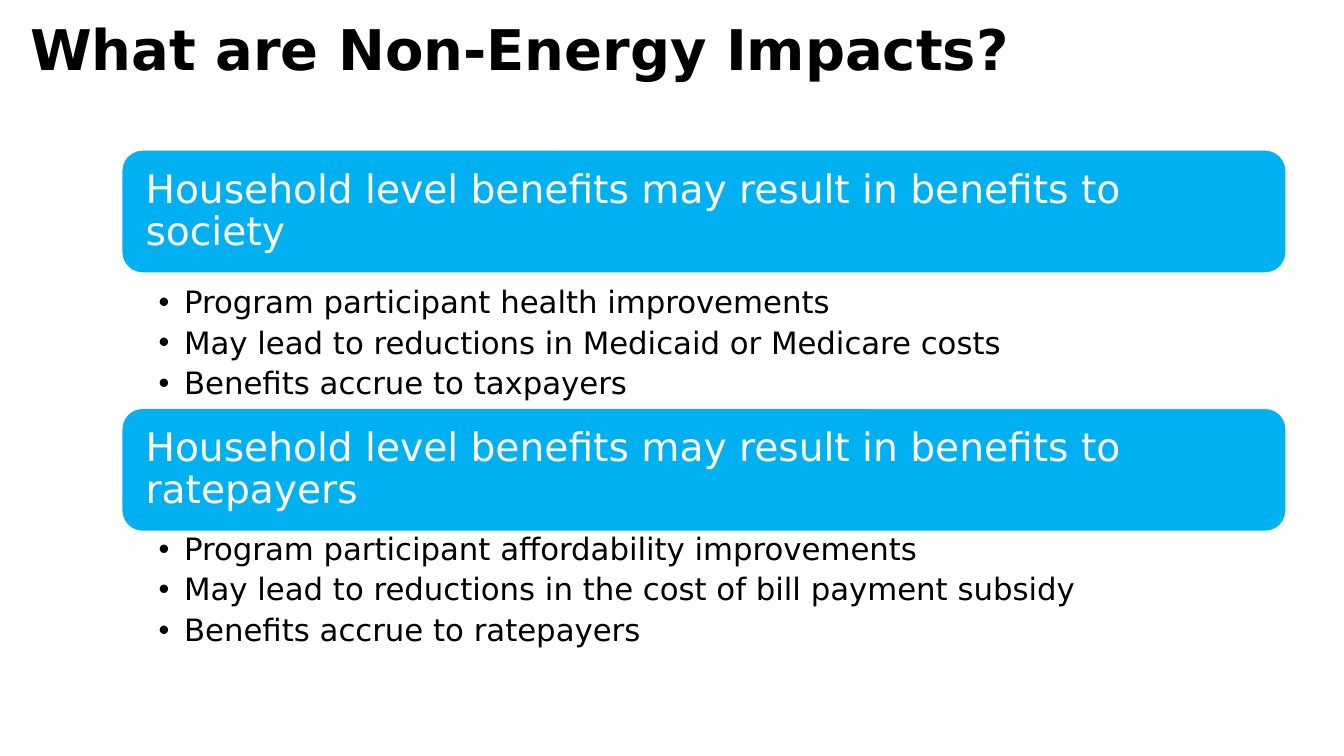
from pptx import Presentation
from pptx.dml.color import RGBColor
from pptx.enum.shapes import MSO_SHAPE
from pptx.enum.text import MSO_ANCHOR, MSO_AUTO_SIZE, PP_ALIGN
from pptx.util import Cm, Pt

TITLE = "What are Non-Energy Impacts?"
# heading, bar top (cm), list top (cm), bullets
SECTIONS = [
    ("Household level benefits may result in benefits to society", 3.78, 7.14, [
        "Program participant health improvements",
        "May lead to reductions in Medicaid or Medicare costs",
        "Benefits accrue to taxpayers",
    ]),
    ("Household level benefits may result in benefits to ratepayers", 10.29, 13.36, [
        "Program participant affordability improvements",
        "May lead to reductions in the cost of bill payment subsidy",
        "Benefits accrue to ratepayers",
    ]),
]

FONT = "DejaVu Sans"
BLACK = RGBColor(0x00, 0x00, 0x00)
WHITE = RGBColor(0xFF, 0xFF, 0xFF)
BLUE = RGBColor(0x00, 0xB0, 0xF0)
ROUNDED = MSO_SHAPE.ROUNDED_RECTANGLE
MIDDLE, TOP = MSO_ANCHOR.MIDDLE, MSO_ANCHOR.TOP
NO_FIT = MSO_AUTO_SIZE.NONE
LEFT = PP_ALIGN.LEFT

LEFT_EDGE, WIDTH = 3.07, 29.34
BAR_HEIGHT, LIST_HEIGHT = 3.1, 3.15
INDENT = Cm(0.64)


def place(shape, left, top, width, height):
    shape.left, shape.top = Cm(left), Cm(top)
    shape.width, shape.height = Cm(width), Cm(height)


def write(shape, lines, size, color=BLACK, bold=False, anchor=MIDDLE,
          insets=(0.25, 0.13, 0.25, 0.13), after=0, bullets=False):
    """Fill a shape with one paragraph per line; insets are left, top, right, bottom in cm."""
    tf = shape.text_frame
    tf.word_wrap = True
    tf.auto_size = NO_FIT
    tf.vertical_anchor = anchor
    tf.margin_left, tf.margin_top, tf.margin_right, tf.margin_bottom = map(Cm, insets)
    for i, line in enumerate(lines):
        p = tf.paragraphs[0] if i == 0 else tf.add_paragraph()
        p.alignment = LEFT
        p.line_spacing = 0.9
        p.space_before, p.space_after = Pt(0), Pt(after)
        if bullets:
            pPr = p._p.get_or_add_pPr()
            pPr.set("marL", str(INDENT))
            pPr.set("indent", str(-INDENT))
        r = p.add_run()
        r.text = line
        r.font.name, r.font.size, r.font.bold = FONT, Pt(size), bold
        r.font.color.rgb = color


prs = Presentation()
prs.slide_width, prs.slide_height = Cm(33.87), Cm(19.05)
s = prs.slides.add_slide(prs.slide_layouts.get_by_name("Two Content"))

title, *lists = list(s.placeholders)[:3]
place(title, 0.51, -0.53, 29.21, 3.68)
write(title, [TITLE], 40, bold=True)

for (heading, bar_top, list_top, points), body in zip(SECTIONS, lists):
    bar = s.shapes.add_shape(ROUNDED, Cm(LEFT_EDGE), Cm(bar_top), Cm(WIDTH), Cm(BAR_HEIGHT))
    bar.shadow.inherit = False
    bar.fill.solid()
    bar.fill.fore_color.rgb = BLUE
    bar.line.color.rgb = WHITE
    bar.line.width = Pt(1)
    write(bar, [heading], 28, color=WHITE, insets=(0.45, 0.45, 0.45, 0.45))

    place(body, LEFT_EDGE, list_top, WIDTH, LIST_HEIGHT)
    write(body, points, 22, anchor=TOP, insets=(0.93, 0.1, 0.55, 0.1), after=5, bullets=True)

prs.save("out.pptx")
